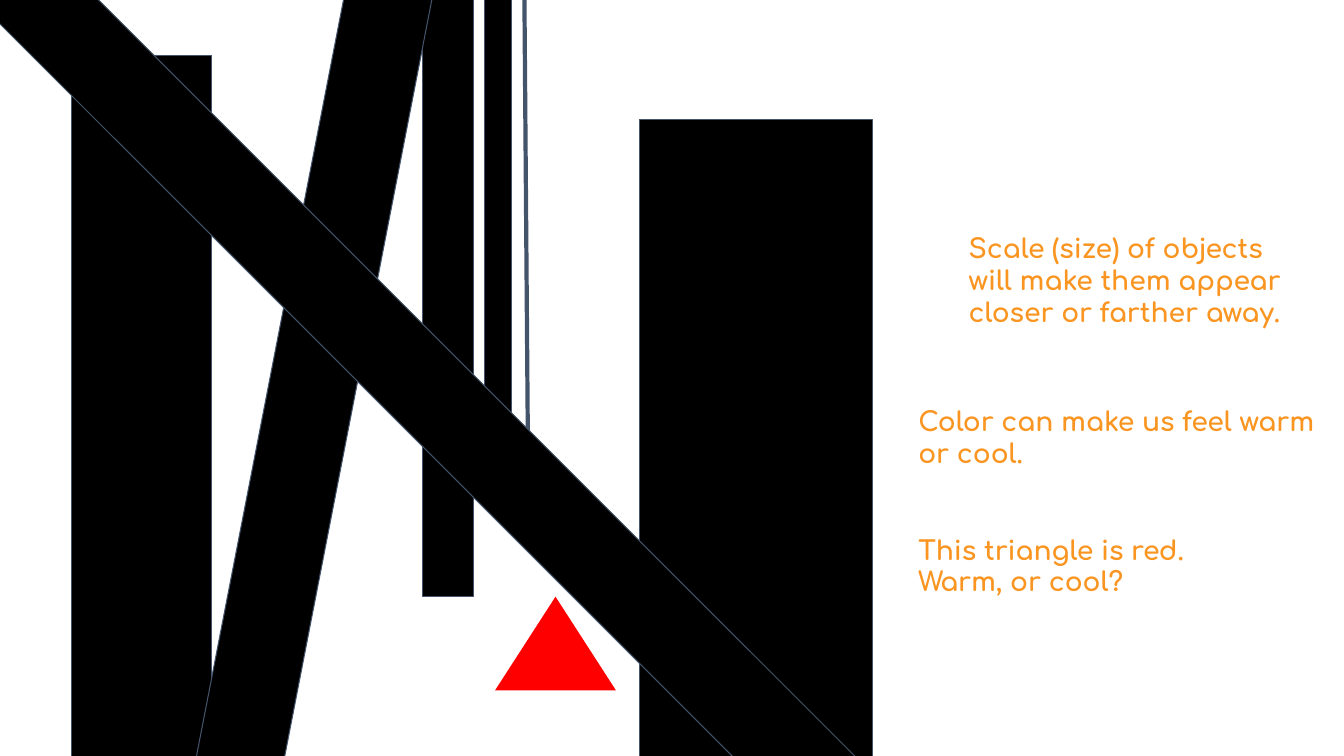
"""Build a slide on how scale and colour change the look of objects."""
from pptx import Presentation
from pptx.dml.color import RGBColor
from pptx.enum.shapes import MSO_CONNECTOR, MSO_SHAPE as Shape
from pptx.enum.text import MSO_AUTO_SIZE
from pptx.oxml.ns import qn
from pptx.util import Emu, Pt
from lxml.etree import SubElement

BLACK = RGBColor(0x00, 0x00, 0x00)
SLATE = RGBColor(0x44, 0x54, 0x6A)
RED = RGBColor(0xFF, 0x00, 0x00)
ORANGE = RGBColor(0xF9, 0x95, 0x20)

UPRIGHT_BARS = [
    (71, 55, 139, 750),
    (419, -69, 51, 661),
    (634, 119, 231, 768),
    (481, -166, 26, 648),
]
THIN_LINE = (519, -150, 524, 495)
TRIANGLE = (491, 592, 120, 93)
TILTED_BARS = [
    ((284, -288, 86, 1168), 11),
    ((369, -209, 86, 1168), 315),
]
COLOR_NOTE = [
    ["Color can make us feel warm", "or cool."],
    ["This triangle is red.", "Warm, or cool?"],
]
SCALE_NOTE = [
    ["Scale (size) of objects", "will make them appear", "closer or farther away."],
]
BLOCK_GAP = Pt(46)


def px(*lengths):
    return [Emu(length * 9144) for length in lengths]


def add_figure(page, kind, frame, fill, line=None, rotation=0):
    figure = page.shapes.add_shape(kind, *px(*frame))
    figure.shadow.inherit = False
    figure.rotation = rotation
    figure.fill.solid()
    figure.fill.fore_color.rgb = fill
    if line is None:
        figure.line.fill.background()
    else:
        figure.line.color.rgb = line
        figure.line.width = Pt(0.75)


def add_line(page, ends, color, width):
    line = page.shapes.add_connector(MSO_CONNECTOR.STRAIGHT, *px(*ends))
    line.line.color.rgb = color
    line.line.width = Pt(width)
    SubElement(line._element.spPr, qn("a:effectLst"))


def add_note(page, blocks, frame, size=19, color=ORANGE, font="Comfortaa"):
    box = page.shapes.add_textbox(*px(*frame))
    text = box.text_frame
    text.word_wrap = True
    text.auto_size = MSO_AUTO_SIZE.SHAPE_TO_FIT_TEXT
    inset, = px(10)
    text.margin_left = text.margin_right = inset
    text.margin_top = text.margin_bottom = inset
    text.text = "\n".join(line for block in blocks for line in block)
    starts = [sum(map(len, blocks[:index])) for index in range(1, len(blocks))]
    for index, para in enumerate(text.paragraphs):
        if index in starts:
            para.space_before = BLOCK_GAP
        for span in para.runs:
            span.font.name = font
            span.font.size = Pt(size)
            span.font.bold = True
            span.font.color.rgb = color


def main():
    deck = Presentation()
    deck.slide_width, deck.slide_height = px(1333, 750)
    page = deck.slides.add_slide(deck.slide_layouts[6])
    for frame in UPRIGHT_BARS:
        add_figure(page, Shape.RECTANGLE, frame, BLACK, line=SLATE)
    add_line(page, THIN_LINE, SLATE, width=3)
    add_note(page, COLOR_NOTE, (901, 392, 800, 212))
    add_figure(page, Shape.ISOSCELES_TRIANGLE, TRIANGLE, RED)
    for frame, angle in TILTED_BARS:
        add_figure(page, Shape.RECTANGLE, frame, BLACK, line=SLATE, rotation=angle)
    add_note(page, SCALE_NOTE, (951, 220, 800, 116))
    deck.save("out.pptx")


if __name__ == "__main__":
    main()
